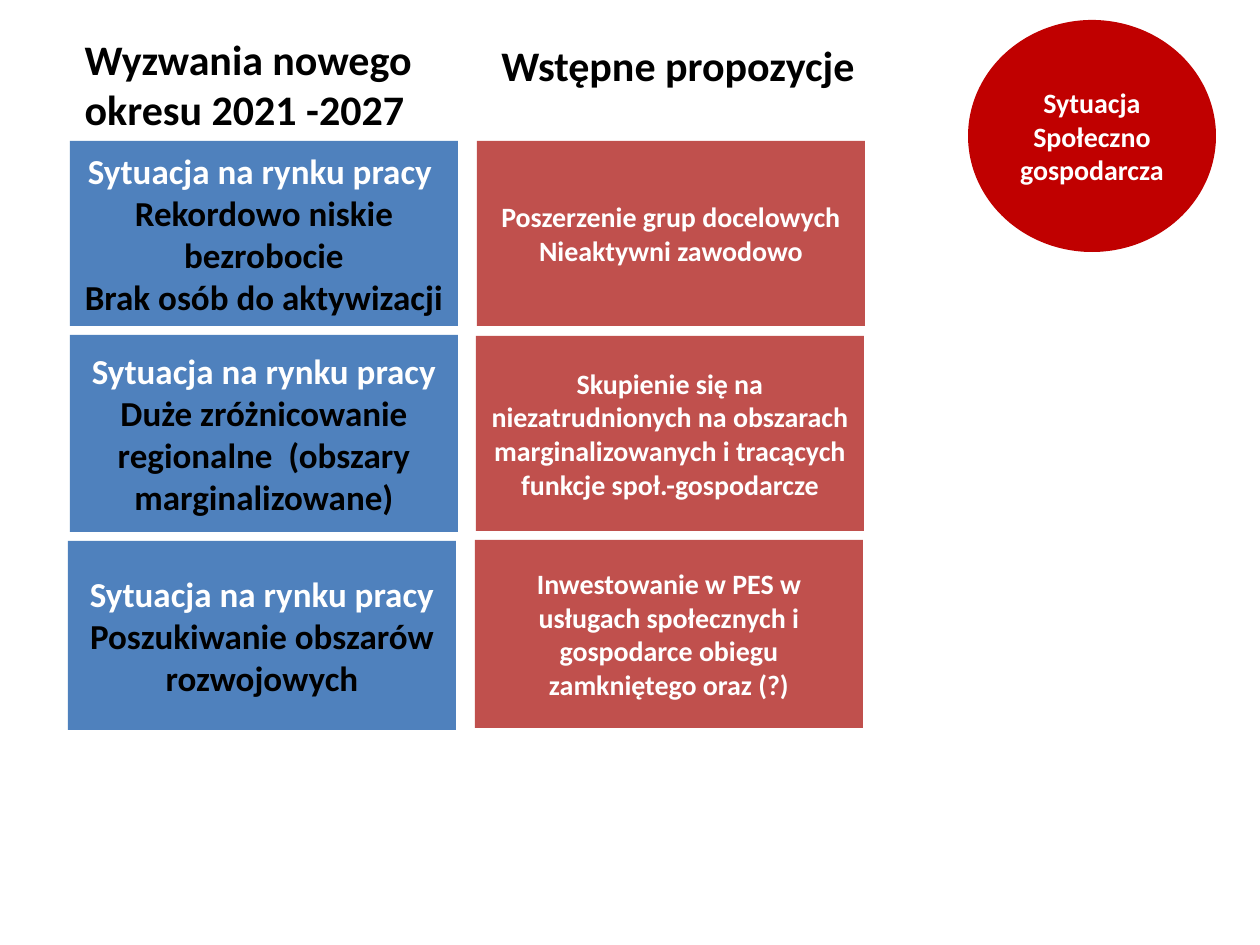
from pptx import Presentation
from pptx.dml.color import RGBColor
from pptx.enum.shapes import MSO_SHAPE as Shape
from pptx.enum.text import MSO_ANCHOR as Anchor, MSO_AUTO_SIZE as AutoSize, PP_ALIGN as Align
from pptx.util import Emu, Pt

SCALE = 914400 / 126
WHITE, BLACK, BLUE, RED, DARK_RED = "FFFFFF", "000000", "4F81BD", "C0504D", "C00000"
BOX_WIDTH = 388

CHALLENGES_HEADING = "Wyzwania nowego okresu 2021 -2027"
PROPOSALS_HEADING = "Wstępne propozycje"
CHALLENGES = [
    ((70, 141, 185), ["Sytuacja na rynku pracy ", "Rekordowo niskie bezrobocie",
                      "Brak osób do aktywizacji"]),
    ((70, 335, 197), ["Sytuacja na rynku pracy",
                      "Duże zróżnicowanie regionalne  (obszary marginalizowane)"]),
    ((68, 541, 189), ["Sytuacja na rynku pracy", "Poszukiwanie obszarów rozwojowych"]),
]
PROPOSALS = [
    ((477, 141, 185), ["Poszerzenie grup docelowych", "Nieaktywni zawodowo"]),
    ((476, 336, 195), ["Skupienie się na niezatrudnionych na obszarach "
                       "marginalizowanych i tracących funkcje społ.-gospodarcze"]),
    ((475, 540, 188), ["Inwestowanie w PES w usługach społecznych i gospodarce "
                       "obiegu zamkniętego oraz (?)"]),
]
TOPIC = ["Sytuacja", "Społeczno", "gospodarcza"]


def px(value):
    return Emu(round(value * SCALE))


def color(value):
    return RGBColor.from_string(value)


def write(shape, lines, size, first=WHITE, rest=WHITE, align=Align.CENTER, anchor=Anchor.MIDDLE):
    frame = shape.text_frame
    frame.word_wrap = True
    frame.auto_size = AutoSize.NONE
    frame.vertical_anchor = anchor
    for index, line in enumerate(lines):
        paragraph = frame.add_paragraph() if index else frame.paragraphs[0]
        paragraph.alignment = align
        run = paragraph.add_run()
        run.text = line
        run.font.name = "Calibri"
        run.font.size = Pt(size)
        run.font.bold = True
        run.font.color.rgb = color(rest if index else first)


def add_filled(slide, kind, box, fill, lines, size, **text_format):
    shape = slide.shapes.add_shape(kind, *map(px, box))
    shape.shadow.inherit = False
    shape.fill.solid()
    shape.fill.fore_color.rgb = color(fill)
    shape.line.fill.background()
    write(shape, lines, size, **text_format)


def main():
    presentation = Presentation()
    presentation.slide_width, presentation.slide_height = px(1260), px(945)
    slide = presentation.slides.add_slide(presentation.slide_layouts[5])

    heading_format = dict(first=BLACK, align=Align.LEFT, anchor=Anchor.TOP)
    title = slide.shapes.title
    title.left, title.top, title.width, title.height = map(px, (72, 27, 393, 114))
    write(title, [CHALLENGES_HEADING], 24, **heading_format)
    proposals_heading = slide.shapes.add_textbox(*map(px, (489, 33, 532, 63)))
    write(proposals_heading, [PROPOSALS_HEADING], 24, **heading_format)

    columns = [(CHALLENGES, BLUE, 20, BLACK), (PROPOSALS, RED, 16, WHITE)]
    for cards, fill, size, rest in columns:
        for (left, top, height), lines in cards:
            add_filled(slide, Shape.RECTANGLE, (left, top, BOX_WIDTH, height),
                       fill, lines, size, rest=rest)
    add_filled(slide, Shape.OVAL, (968, 20, 248, 232), DARK_RED, TOPIC, 16)

    presentation.save("out.pptx")


if __name__ == "__main__":
    main()
